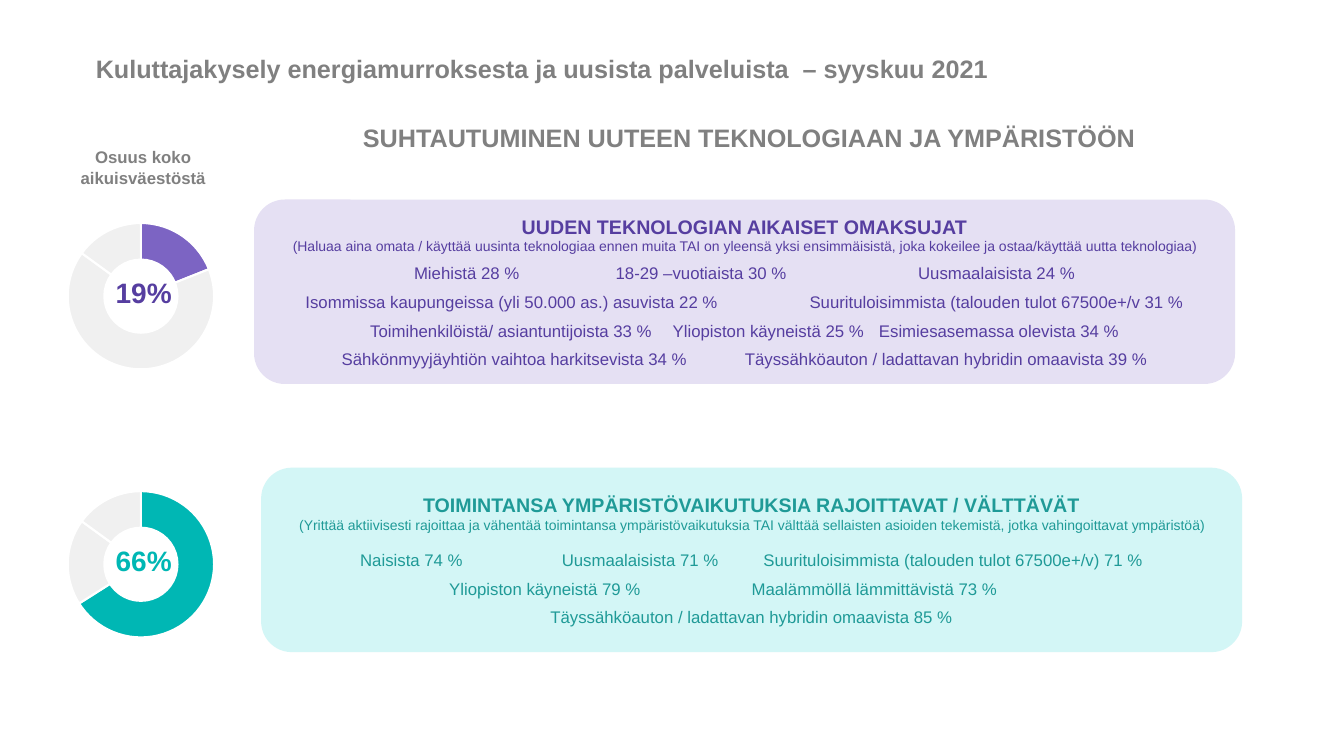
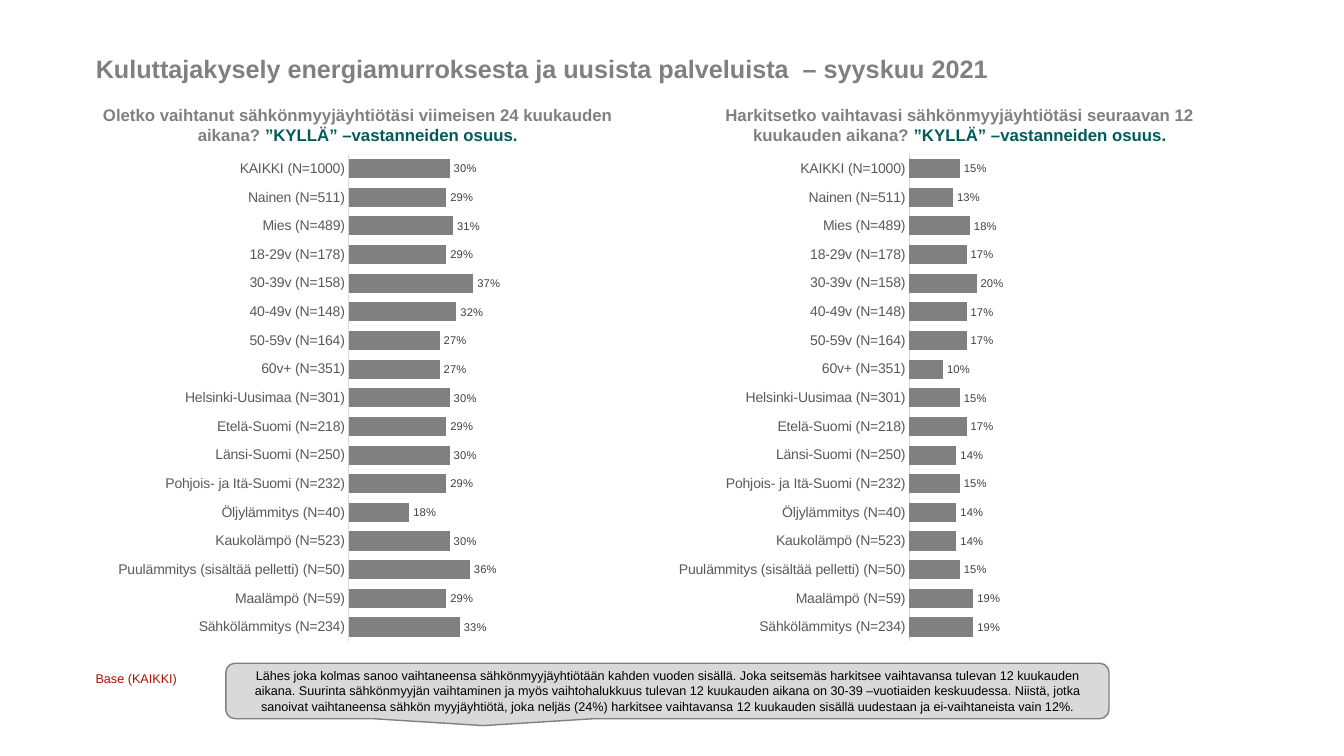
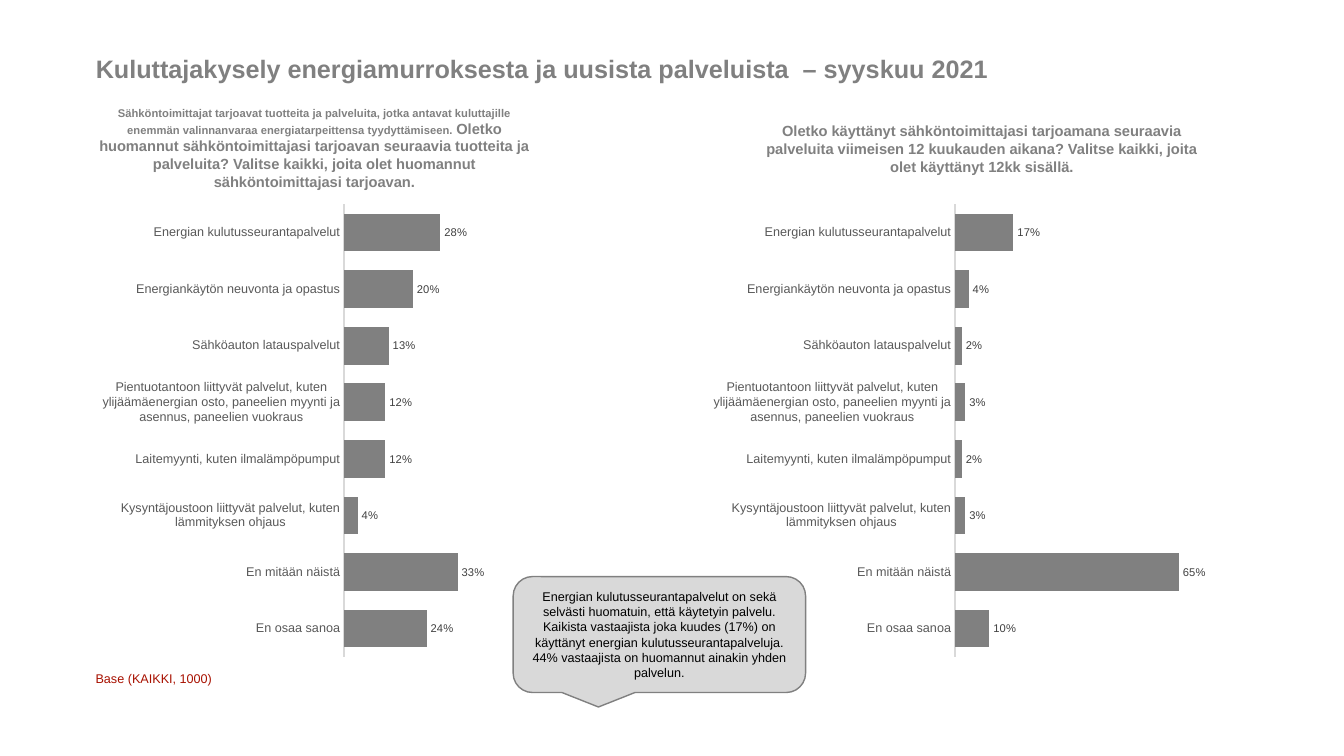
from dataclasses import dataclass
from typing import Any

from lxml import etree
from pptx import Presentation, util as u
from pptx.chart import data as cd
from pptx.dml.color import RGBColor
from pptx.enum import chart as ce, shapes, text
from pptx.oxml import ns

PX = 9144  # EMU per px, 100 px to the inch
FONT = "Arial"
TITLE = "Kuluttajakysely energiamurroksesta ja uusista palveluista  – syyskuu 2021"
KYLLA = "”KYLLÄ” –vastanneiden osuus."

WHITE = RGBColor(0xFF, 0xFF, 0xFF)
BLACK = RGBColor(0x00, 0x00, 0x00)
GREY = RGBColor(0x80, 0x80, 0x80)
DARK = RGBColor(0x59, 0x59, 0x59)
LABEL = RGBColor(0x40, 0x40, 0x40)
SILVER = RGBColor(0xD9, 0xD9, 0xD9)
PALE = RGBColor(0xF0, 0xF0, 0xF0)
RED = RGBColor(0xA8, 0x11, 0x00)
PINE = RGBColor(0x00, 0x5C, 0x5A)
PURPLE = RGBColor(0x56, 0x3E, 0xA0)
VIOLET = RGBColor(0x7C, 0x64, 0xC3)
LILAC = RGBColor(0xE5, 0xE0, 0xF3)
TEAL = RGBColor(0x1F, 0x9A, 0x97)
AQUA = RGBColor(0x00, 0xB7, 0xB4)
MINT = RGBColor(0xD3, 0xF6, 0xF6)

LEFT, MID = text.PP_ALIGN.LEFT, text.PP_ALIGN.CENTER
TOP, CENTRE = text.MSO_ANCHOR.TOP, text.MSO_ANCHOR.MIDDLE


@dataclass
class Box:
    x: int
    y: int
    w: int
    h: int

    def emu(self) -> tuple[int, ...]:
        return tuple(v * PX for v in (self.x, self.y, self.w, self.h))


@dataclass
class Run:
    text: str
    size: float
    color: RGBColor = GREY
    bold: bool = False


@dataclass
class Para:
    runs: list[Run]
    after: int = 0


@dataclass
class Group:
    """A segment of adults: a ring with its share and a card of facts."""
    ring: Box
    share: Box
    card: Box
    vals: tuple[int, ...]
    color: RGBColor
    mark: RGBColor
    ink: RGBColor
    fill: RGBColor
    head: str
    note: str
    gap: int
    facts: list[str]


@dataclass
class Bars:
    box: Box
    head: Box
    runs: list[Run]
    vals: list[int]
    plot: tuple[float, ...]


@dataclass
class Page:
    cats: list[str]
    size: int
    bars: list[Bars]
    base: str
    call: Box
    note: str


def put(obj: Any, **vals: Any) -> None:
    for key, val in vals.items():
        setattr(obj, key, val)


def style(font: Any, size: float, color: RGBColor, bold: bool = False) -> None:
    put(font, name=FONT, size=u.Pt(size), bold=bold)
    font.color.rgb = color


def write(shape: Any, paras: list[Para], align: Any = MID, anchor: Any = CENTRE) -> None:
    frame = shape.text_frame
    put(frame, word_wrap=True, auto_size=text.MSO_AUTO_SIZE.NONE, vertical_anchor=anchor)
    for i, item in enumerate(paras):
        para = frame.add_paragraph() if i else frame.paragraphs[0]
        put(para, alignment=align, space_before=u.Pt(0), space_after=u.Pt(item.after))
        para._p.get_or_add_pPr().set("defTabSz", str(100 * PX))
        for part in item.runs:
            run = para.add_run()
            run.text = part.text
            style(run.font, part.size, part.color, part.bold)


def label(slide: Any, box: Box, runs: list[Run], align: Any = MID, anchor: Any = CENTRE) -> None:
    write(slide.shapes.add_textbox(*box.emu()), [Para(runs)], align, anchor)


def panel(slide: Any, kind: Any, box: Box, fill: RGBColor, paras: list[Para],
          line: RGBColor | None = None) -> None:
    shape = slide.shapes.add_shape(kind, *box.emu())
    shape.shadow.inherit = False
    shape.fill.solid()
    shape.fill.fore_color.rgb = fill
    if line is None:
        shape.line.fill.background()
    else:
        shape.line.color.rgb = line
        shape.line.width = u.Pt(1)
    write(shape, paras)


def place(chart: Any, plot: tuple[float, ...]) -> None:
    """Fix the inner plot area as fractions of the chart."""
    area = chart.element.xpath("c:chart/c:plotArea")[0]
    for old in area.xpath("c:layout"):
        area.remove(old)
    layout = etree.Element(ns.qn("c:layout"))
    area.insert(0, layout)
    manual = etree.SubElement(layout, ns.qn("c:manualLayout"))
    marks = [("layoutTarget", "inner"), ("xMode", "edge"), ("yMode", "edge")]
    for tag, val in marks + list(zip("xywh", plot)):
        etree.SubElement(manual, ns.qn(f"c:{tag}")).set("val", str(val))


def graph(slide: Any, kind: Any, box: Box, cats: list[str], vals: Any,
          plot: tuple[float, ...]) -> Any:
    data = cd.CategoryChartData()
    data.categories = cats
    data.add_series("Series 1", vals)
    chart = slide.shapes.add_chart(kind, *box.emu(), data).chart
    put(chart, has_title=False, has_legend=False)
    style(chart.font, 10, BLACK)
    place(chart, plot)
    return chart


def donut(slide: Any, group: Group) -> None:
    chart = graph(slide, ce.XL_CHART_TYPE.DOUGHNUT, group.ring, ["1", "2", "3"],
                  group.vals, (0.16, 0.08, 0.66, 0.88))
    chart.plots[0].has_data_labels = False
    for hole in chart.element.xpath(".//c:holeSize"):
        hole.set("val", "75")
    for i, color in enumerate((group.color, PALE, PALE)):
        form = chart.plots[0].series[0].points[i].format
        form.fill.solid()
        form.fill.fore_color.rgb = color
        form.line.color.rgb = WHITE
        form.line.width = u.Pt(1.5)


def bars(slide: Any, item: Bars, cats: list[str], size: int) -> None:
    chart = graph(slide, ce.XL_CHART_TYPE.BAR_CLUSTERED, item.box, cats,
                  [v / 100 for v in item.vals], item.plot)
    axis = chart.category_axis
    put(axis, reverse_order=True, major_tick_mark=ce.XL_TICK_MARK.NONE,
        minor_tick_mark=ce.XL_TICK_MARK.NONE, has_major_gridlines=False)
    style(axis.tick_labels.font, size, DARK)
    axis.format.line.color.rgb = SILVER
    axis.format.line.width = u.Pt(0.75)
    put(chart.value_axis, minimum_scale=0, maximum_scale=1, major_unit=0.2,
        has_major_gridlines=False, visible=False)
    plot = chart.plots[0]
    put(plot, gap_width=50, vary_by_categories=False, has_data_labels=True)
    fill = plot.series[0].format.fill
    fill.solid()
    fill.fore_color.rgb = GREY
    tags = plot.data_labels
    put(tags, show_value=True, number_format="0%", number_format_is_linked=False,
        position=ce.XL_LABEL_POSITION.OUTSIDE_END)
    style(tags.font, 8, LABEL)


def start(deck: Any) -> Any:
    """Add a slide with the shared title."""
    slide = deck.slides.add_slide(deck.slide_layouts[5])
    title = slide.shapes.title
    put(title, **dict(zip(("left", "top", "width", "height"), Box(85, 48, 1163, 40).emu())))
    write(title, [Para([Run(TITLE, 18, GREY, True)])], LEFT, TOP)
    return slide


def draw_group(slide: Any, group: Group) -> None:
    ink = group.ink
    paras = [Para([Run(group.head, 14, ink, True)]),
             Para([Run(group.note, 10, ink)], group.gap)]
    paras += [Para([Run(fact, 12, ink)], 6) for fact in group.facts]
    panel(slide, shapes.MSO_SHAPE.ROUNDED_RECTANGLE, group.card, group.fill, paras)
    donut(slide, group)
    label(slide, group.share, [Run(f"{group.vals[0]}%", 20, group.mark, True)])


def draw_page(slide: Any, page: Page) -> None:
    label(slide, Box(85, 661, 1163, 28), [Run(page.base, 9, RED)], LEFT, TOP)
    for item in page.bars:
        label(slide, item.head, item.runs)
        bars(slide, item, page.cats, page.size)
    panel(slide, shapes.MSO_SHAPE.ROUNDED_RECTANGULAR_CALLOUT, page.call, SILVER,
          [Para([Run(page.note, 9, BLACK)])], GREY)


GROUPS = [
    Group(Box(32, 205, 220, 171), Box(102, 268, 81, 44), Box(252, 198, 973, 183),
          (19, 66, 15), VIOLET, PURPLE, PURPLE, LILAC,
          "UUDEN TEKNOLOGIAN AIKAISET OMAKSUJAT",
          "(Haluaa aina omata / käyttää uusinta teknologiaa ennen muita TAI on yleensä yksi "
          "ensimmäisistä, joka kokeilee ja ostaa/käyttää uutta teknologiaa)", 6,
          ["Miehistä 28 %\t18-29 –vuotiaista 30 %\t\tUusmaalaisista 24 %",
           "Isommissa kaupungeissa (yli 50.000 as.) asuvista 22 %\t"
           "Suurituloisimmista (talouden tulot 67500e+/v 31 %",
           "Toimihenkilöistä/ asiantuntijoista 33 %\tYliopiston käyneistä 25 %\t"
           " Esimiesasemassa olevista 34 %",
           "Sähkönmyyjäyhtiön vaihtoa harkitsevista 34 %\t"
           "Täyssähköauton / ladattavan hybridin omaavista 39 %"]),
    Group(Box(32, 471, 220, 171), Box(102, 534, 81, 44), Box(259, 464, 973, 183),
          (66, 19, 15), AQUA, AQUA, TEAL, MINT,
          "TOIMINTANSA YMPÄRISTÖVAIKUTUKSIA RAJOITTAVAT / VÄLTTÄVÄT",
          "(Yrittää aktiivisesti rajoittaa ja vähentää toimintansa ympäristövaikutuksia TAI "
          "välttää sellaisten asioiden tekemistä, jotka vahingoittavat ympäristöä)", 12,
          ["Naisista 74 %\tUusmaalaisista 71 %\t"
           "Suurituloisimmista (talouden tulot 67500e+/v) 71 %",
           "Yliopiston käyneistä 79 %\t\tMaalämmöllä lämmittävistä 73 %\t",
           "Täyssähköauton / ladattavan hybridin omaavista 85 %"]),
]

SWITCH = Page(
    ["KAIKKI (N=1000)", "Nainen (N=511)", "Mies (N=489)", "18-29v (N=178)",
     "30-39v (N=158)", "40-49v (N=148)", "50-59v (N=164)", "60v+ (N=351)",
     "Helsinki-Uusimaa (N=301)", "Etelä-Suomi (N=218)", "Länsi-Suomi (N=250)",
     "Pohjois- ja Itä-Suomi (N=232)", "Öljylämmitys (N=40)", "Kaukolämpö (N=523)",
     "Puulämmitys (sisältää pelletti) (N=50)", "Maalämpö (N=59)", "Sähkölämmitys (N=234)"],
    10,
    [Bars(Box(85, 148, 607, 514), Box(85, 101, 540, 46),
          [Run("Oletko vaihtanut sähkönmyyjäyhtiötäsi viimeisen 24 kuukauden aikana? ",
               12, GREY, True), Run(KYLLA, 12, PINE, True)],
          [30, 29, 31, 29, 37, 32, 27, 27, 30, 29, 30, 29, 18, 30, 36, 29, 33],
          (0.43, 0.01, 0.55, 0.94)),
     Bars(Box(641, 148, 607, 514), Box(682, 99, 540, 50),
          [Run("Harkitsetko vaihtavasi sähkönmyyjäyhtiötäsi seuraavan 12 kuukauden aikana? ",
               12, GREY, True), Run(KYLLA, 12, PINE, True)],
          [15, 13, 18, 17, 20, 17, 17, 10, 15, 17, 14, 15, 14, 14, 15, 19, 19],
          (0.43, 0.01, 0.55, 0.94))],
    "Base (KAIKKI)", Box(224, 658, 876, 55),
    "Lähes joka kolmas sanoo vaihtaneensa sähkönmyyjäyhtiötään kahden vuoden sisällä. Joka "
    "seitsemäs harkitsee vaihtavansa tulevan 12 kuukauden aikana. Suurinta sähkönmyyjän "
    "vaihtaminen ja myös vaihtohalukkuus tulevan 12 kuukauden aikana on 30-39 –vuotiaiden "
    "keskuudessa. Niistä, jotka sanoivat vaihtaneensa sähkön myyjäyhtiötä, joka neljäs (24%) "
    "harkitsee vaihtavansa 12 kuukauden sisällä uudestaan ja ei-vaihtaneista vain 12%.")

SERVICE = Page(
    ["Energian kulutusseurantapalvelut", "Energiankäytön neuvonta ja opastus",
     "Sähköauton latauspalvelut",
     "Pientuotantoon liittyvät palvelut, kuten ylijäämäenergian osto, paneelien myynti ja "
     "asennus, paneelien vuokraus",
     "Laitemyynti, kuten ilmalämpöpumput",
     "Kysyntäjoustoon liittyvät palvelut, kuten lämmityksen ohjaus",
     "En mitään näistä", "En osaa sanoa"],
    9,
    [Bars(Box(85, 198, 610, 463), Box(85, 100, 454, 94),
          [Run("Sähköntoimittajat tarjoavat tuotteita ja palveluita, jotka antavat kuluttajille "
               "enemmän valinnanvaraa energiatarpeittensa tyydyttämiseen. ", 8, GREY, True),
           Run("Oletko huomannut sähköntoimittajasi tarjoavan seuraavia tuotteita ja "
               "palveluita? Valitse kaikki, joita olet huomannut sähköntoimittajasi "
               "tarjoavan.", 10.5, GREY, True)],
          [28, 20, 13, 12, 12, 4, 33, 24], (0.42, 0.01, 0.56, 0.97)),
     Bars(Box(691, 198, 610, 463), Box(747, 116, 454, 63),
          [Run("Oletko käyttänyt sähköntoimittajasi tarjoamana seuraavia palveluita viimeisen "
               "12 kuukauden aikana? Valitse kaikki, joita olet käyttänyt 12kk sisällä.",
               10.5, GREY, True)],
          [17, 4, 2, 3, 2, 3, 65, 10], (0.42, 0.01, 0.56, 0.97))],
    "Base (KAIKKI, 1000)", Box(509, 572, 290, 115),
    "Energian kulutusseurantapalvelut on sekä selvästi huomatuin, että käytetyin palvelu. "
    "Kaikista vastaajista joka kuudes (17%) on käyttänyt energian kulutusseurantapalveluja. "
    "44% vastaajista on huomannut ainakin yhden palvelun.")


def main() -> None:
    deck = Presentation()
    put(deck, slide_width=1333 * PX, slide_height=750 * PX)
    slide = start(deck)
    label(slide, Box(252, 116, 982, 40),
          [Run("SUHTAUTUMINEN UUTEEN TEKNOLOGIAAN JA YMPÄRISTÖÖN", 18, GREY, True)], MID, TOP)
    label(slide, Box(59, 141, 166, 50), [Run("Osuus koko aikuisväestöstä", 12, GREY, True)])
    for group in GROUPS:
        draw_group(slide, group)
    for page in (SWITCH, SERVICE):
        draw_page(start(deck), page)
    deck.save("out.pptx")


if __name__ == "__main__":
    main()
